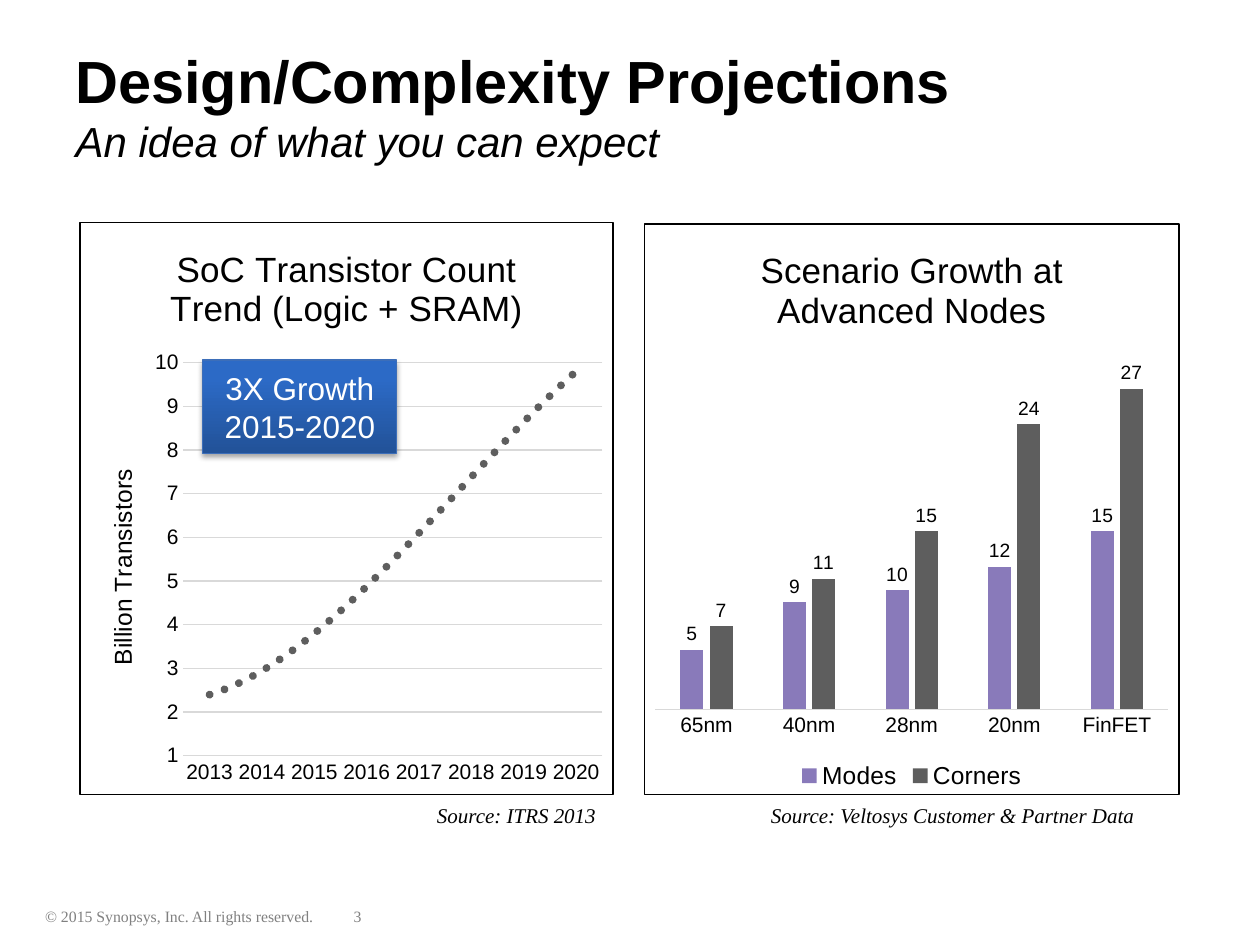
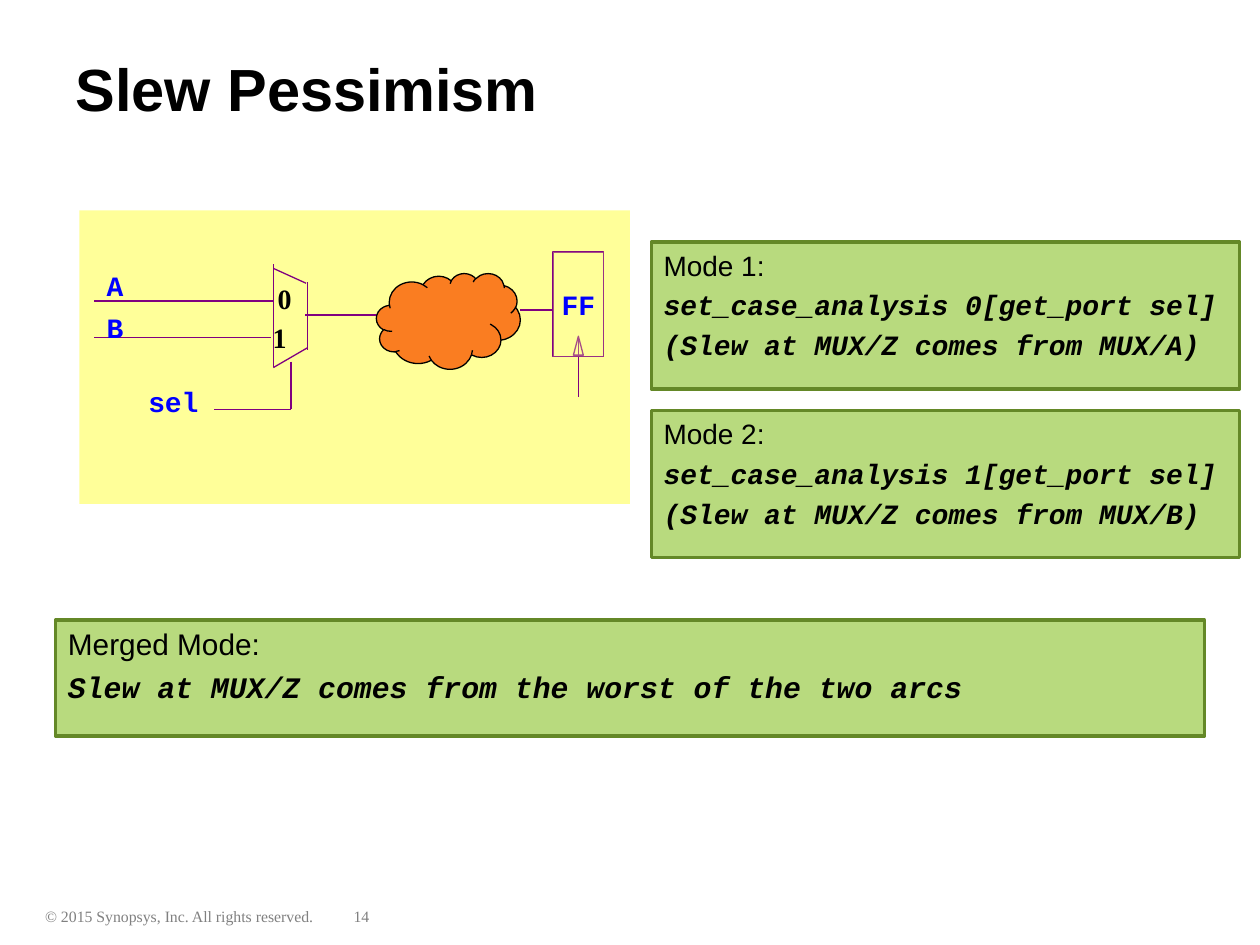
from lxml import etree
from pptx import Presentation
from pptx.chart.data import CategoryChartData
from pptx.dml.color import RGBColor
from pptx.enum.chart import (XL_CHART_TYPE, XL_LABEL_POSITION, XL_LEGEND_POSITION,
                             XL_MARKER_STYLE, XL_TICK_MARK)
from pptx.enum.shapes import MSO_CONNECTOR, MSO_SHAPE
from pptx.enum.text import MSO_ANCHOR, MSO_AUTO_SIZE, PP_ALIGN
from pptx.oxml import parse_xml
from pptx.oxml.ns import nsdecls, qn
from pptx.util import Cm, Pt

LINE_CHART, COLUMN_CHART = XL_CHART_TYPE.LINE_MARKERS, XL_CHART_TYPE.COLUMN_CLUSTERED
OUTSIDE_END, LEGEND_BOTTOM = XL_LABEL_POSITION.OUTSIDE_END, XL_LEGEND_POSITION.BOTTOM
CIRCLE, NO_TICK = XL_MARKER_STYLE.CIRCLE, XL_TICK_MARK.NONE
RECTANGLE, TRIANGLE, CLOUD = MSO_SHAPE.RECTANGLE, MSO_SHAPE.ISOSCELES_TRIANGLE, MSO_SHAPE.CLOUD
STRAIGHT = MSO_CONNECTOR.STRAIGHT
TOP, MIDDLE = MSO_ANCHOR.TOP, MSO_ANCHOR.MIDDLE
LEFT, CENTER = PP_ALIGN.LEFT, PP_ALIGN.CENTER

SANS, SERIF, MONO = "Arial", "Times New Roman", "Courier New"
BLACK, WHITE, GRAY, GRID = "000000", "FFFFFF", "808080", "D9D9D9"
DARK, LILAC, ORANGE = "5E5E5E", "897ABA", "FA7D21"
YELLOW, PURPLE, BLUE = "FFFF99", "800080", "0000FF"
GREEN, GREEN_EDGE = "B8DA7E", "648827"
COPYRIGHT = "© 2015 Synopsys, Inc. All rights reserved."


def color(hex_value):
    """Turn a hex string into a colour."""
    return RGBColor.from_string(hex_value)


def lengths(box):
    """Turn centimetre numbers into lengths."""
    return [Cm(value) for value in box]


def style_font(font, size, name=SANS, hex_value=BLACK, bold=False, italic=False):
    """Set every property of a font."""
    font.size, font.name, font.bold, font.italic = Pt(size), name, bold, italic
    font.color.rgb = color(hex_value)


def style_line(line, hex_value, width=0.75):
    """Give a line its colour and width."""
    line.color.rgb = color(hex_value)
    line.width = Pt(width)


def add_label(page, text, box, size, name=SERIF, hex_value=GRAY, **style):
    """Add a one-line text box."""
    label = page.shapes.add_textbox(*lengths(box))
    label.text_frame.word_wrap = True
    para = label.text_frame.paragraphs[0]
    para.text = text
    style_font(para.font, size, name, hex_value, **style)
    return label


def add_shape(page, kind, box, fill=None, edge=None, width=0.75):
    """Add a flat preset shape."""
    shape = page.shapes.add_shape(kind, *lengths(box))
    shape.shadow.inherit = False
    if fill:
        shape.fill.solid()
        shape.fill.fore_color.rgb = color(fill)
    else:
        shape.fill.background()
    if edge:
        style_line(shape.line, edge, width)
    else:
        shape.line.fill.background()
    return shape


def add_wire(page, start, end):
    """Draw a straight circuit wire."""
    wire = page.shapes.add_connector(STRAIGHT, *lengths(start + end))
    style_line(wire.line, PURPLE)
    etree.SubElement(wire._element.spPr, qn("a:effectLst"))


def add_page(deck, title, title_top, number, subtitle=None):
    """Add a page with its title and footer."""
    page = deck.slides.add_slide(deck.slide_layouts[5])
    heading = page.shapes.title
    heading.left, heading.top, heading.width, heading.height = lengths((1.27, title_top, 24.13, 3.18))
    frame = heading.text_frame
    frame.auto_size, frame.vertical_anchor = MSO_AUTO_SIZE.NONE, MIDDLE
    para = frame.paragraphs[0]
    para.alignment = LEFT
    span = para.add_run()
    span.text = title
    style_font(span.font, 34, bold=True)
    if subtitle:
        para.add_line_break()
        span = para.add_run()
        span.text = subtitle
        style_font(span.font, 24, italic=True)
    add_label(page, COPYRIGHT, (0.66, 18.16, 7.82, 0.64), 9)
    add_label(page, number, (6.88, 18.16, 1.78, 0.64), 9)
    return page


def add_chart(page, kind, box, title, categories, series):
    """Add a framed chart with the shared title and axis style."""
    data = CategoryChartData()
    data.categories = categories
    for name, values in series.items():
        data.add_series(name, values)
    chart = page.shapes.add_chart(kind, *lengths(box), data).chart
    style_font(chart.font, 10)
    chart.has_title, chart.has_legend = True, False
    para = chart.chart_title.text_frame.paragraphs[0]
    para.text = title
    style_font(para.font, 20)
    axis = chart.category_axis
    axis.major_tick_mark = axis.minor_tick_mark = NO_TICK
    style_font(axis.tick_labels.font, 12)
    style_line(axis.format.line, GRID)
    chart._chartSpace.find(qn("c:chart")).addnext(parse_xml(
        f'<c:spPr {nsdecls("c", "a")}><a:noFill/><a:ln w="9525"><a:solidFill>'
        f'<a:srgbClr val="{BLACK}"/></a:solidFill></a:ln></c:spPr>'))
    return chart


def add_trend_chart(page, box):
    """Add the transistor trend with its dotted cubic curve."""
    chart = add_chart(page, LINE_CHART, box, "SoC Transistor Count Trend (Logic + SRAM)",
                      [str(year) for year in range(2013, 2021)],
                      {"Series 1": (2.4, None, 3.8, None, 6.1, None, None, 9.8)})
    axis = chart.value_axis
    axis.minimum_scale, axis.maximum_scale, axis.major_unit = 1, 10, 1
    axis.major_tick_mark = axis.minor_tick_mark = NO_TICK
    axis.tick_labels.number_format = "0"
    axis.tick_labels.number_format_is_linked = False
    style_font(axis.tick_labels.font, 12)
    axis.format.line.fill.background()
    style_line(axis.major_gridlines.format.line, GRID)
    para = axis.axis_title.text_frame.paragraphs[0]
    para.text = "Billion Transistors"
    style_font(para.font, 14)
    series = chart.plots[0].series[0]
    series.smooth = False
    series.format.line.fill.background()
    series.marker.style, series.marker.size = CIRCLE, 5
    series.marker.format.fill.background()
    series.marker.format.line.fill.background()
    series._element.find(qn("c:cat")).addprevious(parse_xml(
        f'<c:trendline {nsdecls("c", "a")}><c:spPr><a:ln w="57150" cap="rnd"><a:solidFill>'
        f'<a:srgbClr val="{DARK}"/></a:solidFill><a:prstDash val="sysDot"/></a:ln></c:spPr>'
        '<c:trendlineType val="poly"/><c:order val="3"/>'
        '<c:dispRSqr val="0"/><c:dispEq val="0"/></c:trendline>'))


def add_scenario_chart(page, box):
    """Add the columns of modes and corners per node."""
    chart = add_chart(page, COLUMN_CHART, box, "Scenario Growth at Advanced Nodes",
                      ["65nm", "40nm", "28nm", "20nm", "FinFET"],
                      {"Modes": (5, 9, 10, 12, 15), "Corners": (7, 11, 15, 24, 27)})
    axis = chart.value_axis
    axis.visible = axis.has_major_gridlines = False
    axis.minimum_scale, axis.maximum_scale = 0, 30
    chart.has_legend = True
    chart.legend.position, chart.legend.include_in_layout = LEGEND_BOTTOM, False
    style_font(chart.legend.font, 14)
    plot = chart.plots[0]
    plot.vary_by_categories, plot.gap_width, plot.overlap = False, 219, -27
    for series, hex_value in zip(plot.series, (LILAC, DARK)):
        series.format.fill.solid()
        series.format.fill.fore_color.rgb = color(hex_value)
        labels = series.data_labels
        labels.show_value, labels.position = True, OUTSIDE_END
        style_font(labels.font, 11)


def add_growth_callout(page, box):
    """Add the shaded growth box."""
    callout = add_shape(page, RECTANGLE, box, edge="3C6EB9")
    callout.fill.gradient()
    callout.fill.gradient_angle = 90
    for stop, position, hex_value in zip(callout.fill.gradient_stops, (0, 0.8), ("225298", "2C6AC6")):
        stop.position, stop.color.rgb = position, color(hex_value)
    callout._element.spPr.find(qn("a:effectLst")).append(parse_xml(
        f'<a:outerShdw {nsdecls("a")} blurRad="40000" dist="23000" dir="5400000" rotWithShape="0">'
        f'<a:srgbClr val="{BLACK}"><a:alpha val="35000"/></a:srgbClr></a:outerShdw>'))
    frame = callout.text_frame
    frame.vertical_anchor = MIDDLE
    frame.text = "3X Growth\n2015-2020"
    for para in frame.paragraphs:
        para.alignment = CENTER
        style_font(para.font, 18, hex_value=WHITE)


def add_circuit(page, box):
    """Draw the multiplexer, logic cloud and flip-flop on a panel."""
    left, top = box[:2]

    def inside(x, y, *size):
        """Shift a place on the panel to the page."""
        return (left + x, top + y) + size

    add_shape(page, RECTANGLE, box, YELLOW)
    wires = {
        "mux": [(3.91, 1.09, 3.91, 3.15), (4.6, 1.45, 4.6, 2.82),
                (4.57, 1.47, 3.91, 1.17), (3.91, 3.17, 4.6, 2.77)],
        "inputs": [(0.3, 1.83, 3.91, 1.83), (0.3, 2.57, 3.86, 2.57)],
        "select": [(4.27, 3.05, 4.27, 4.01), (2.72, 4.01, 4.27, 4.01)],
        "path": [(4.55, 2.11, 5.97, 2.11), (8.89, 2.01, 9.55, 2.01)],
        "clock": [(10.06, 2.59, 10.06, 3.76)],
    }
    for group in wires.values():
        for x1, y1, x2, y2 in group:
            add_wire(page, inside(x1, y1), inside(x2, y2))

    flip_flop = inside(9.55, 0.84, 1.02, 2.11)
    add_shape(page, RECTANGLE, flip_flop, edge=PURPLE)
    add_shape(page, TRIANGLE, inside(9.96, 2.54, 0.2, 0.38), edge=PURPLE)
    veil = add_shape(page, RECTANGLE, flip_flop, YELLOW)
    tint = veil._element.spPr.find(qn("a:solidFill"))[0]
    etree.SubElement(tint, qn("a:alpha")).set("val", "31000")
    veil.text_frame.word_wrap = False
    veil.text_frame.vertical_anchor = MIDDLE
    para = veil.text_frame.paragraphs[0]
    para.text, para.alignment = "FF", CENTER
    style_font(para.font, 16, MONO, BLUE, bold=True)
    add_shape(page, CLOUD, inside(5.99, 1.27, 2.9, 1.93), ORANGE, BLACK)

    for text, x, y in (("A", 0.3, 1.04), ("B", 0.3, 1.9), ("sel", 1.14, 3.38)):
        add_label(page, text, inside(x, y, 1.8, 0.94), 16, MONO, BLUE, bold=True)
    for text, x, y in (("0", 3.89, 1.42), ("1", 3.79, 2.22)):
        pin = add_label(page, text, inside(x, y, 0.5, 0.7), 16, SERIF, BLACK, bold=True)
        frame = pin.text_frame
        frame.margin_left = frame.margin_right = frame.margin_top = frame.margin_bottom = 0
        frame.vertical_anchor = MIDDLE
        frame.paragraphs[0].alignment = CENTER


def add_mode_box(page, box, heading, details, size=16):
    """Add a green box with a heading over code lines."""
    panel = add_shape(page, RECTANGLE, box, GREEN, GREEN_EDGE, 2)
    frame = panel.text_frame
    frame.vertical_anchor = TOP
    frame.text = "\n".join([heading] + details)
    for index, para in enumerate(frame.paragraphs):
        para.alignment = LEFT
        if index:
            para.space_before = Pt(round(size * 0.22, 1))
        style_font(para.font, size, MONO if index else SANS, bold=index > 0, italic=index > 0)


def build_projections(deck):
    """Build the page with the two charts."""
    page = add_page(deck, "Design/Complexity Projections", 0.53, "3", "An idea of what you can expect")
    add_trend_chart(page, (1.6, 4.47, 10.77, 11.56))
    add_growth_callout(page, (4.09, 7.26, 3.91, 1.88))
    add_scenario_chart(page, (12.98, 4.5, 10.8, 11.53))
    for text, left, width in (("Source: ITRS 2013", 8.56, 4.14),
                              ("Source: Veltosys Customer & Partner Data", 15.29, 8.86)):
        add_label(page, text, (left, 16.05, width, 0.76), 12, SERIF, BLACK, italic=True)


def build_slew(deck):
    """Build the page on slew pessimism."""
    page = add_page(deck, "Slew Pessimism", 0.18, "14")
    add_circuit(page, (1.6, 4.24, 11.1, 5.92))
    for index, port in enumerate("AB"):
        add_mode_box(page, (13.13, 4.88 + 3.4 * index, 11.86, 2.96), f"Mode {index + 1}:",
                     [f"set_case_analysis {index}[get_port sel]", f"(Slew at MUX/Z comes from MUX/{port})"])
    add_mode_box(page, (1.12, 12.5, 23.16, 2.34), "Merged Mode:",
                 ["Slew at MUX/Z comes from the worst of the two arcs"], 17)


def main():
    """Build and save the deck."""
    deck = Presentation()
    deck.slide_width, deck.slide_height = Cm(25.4), Cm(19.05)
    build_projections(deck)
    build_slew(deck)
    deck.save("out.pptx")


if __name__ == "__main__":
    main()
